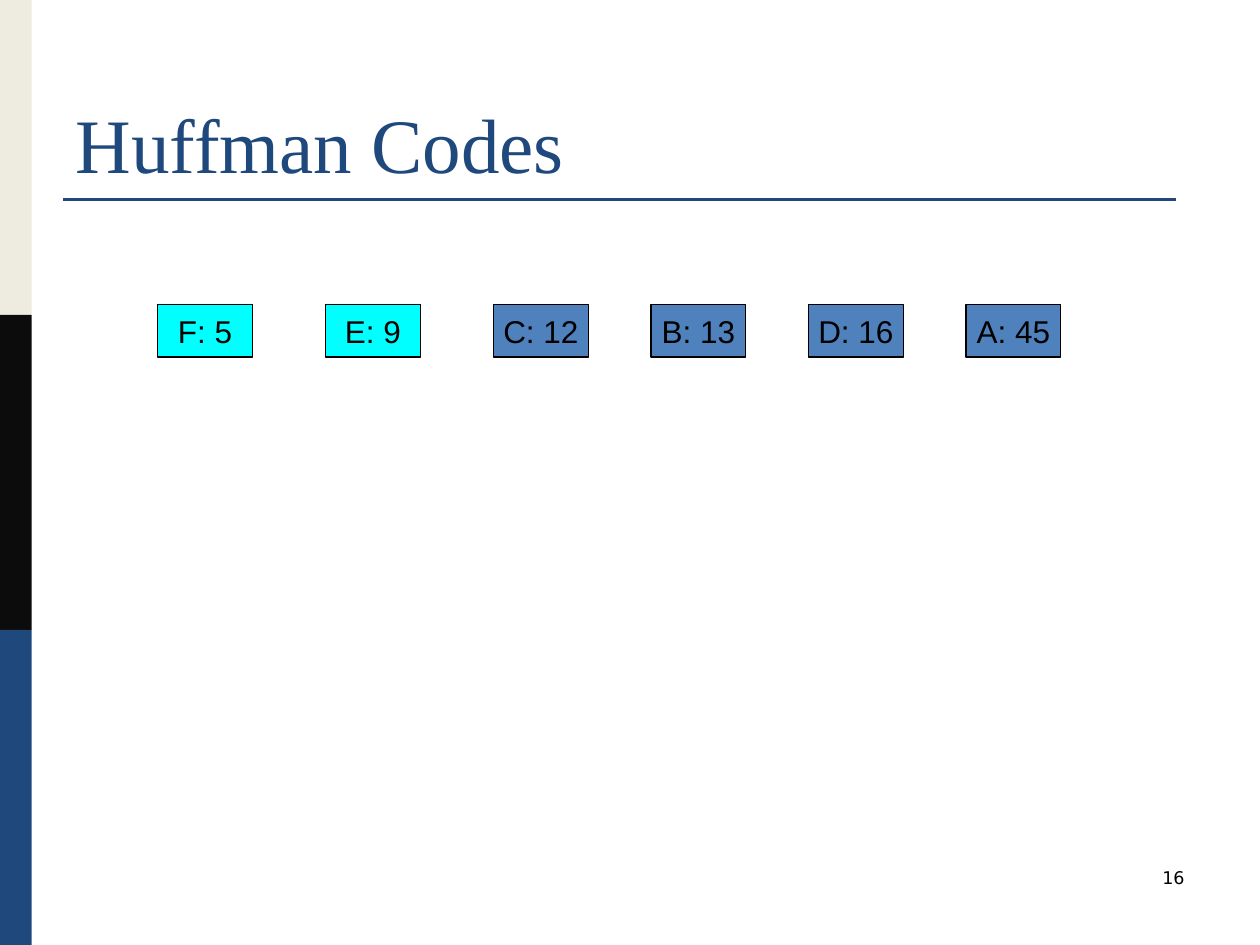
from pptx import Presentation
from pptx.dml.color import RGBColor
from pptx.enum import shapes, text
from pptx.oxml.ns import qn
from pptx.util import Cm, Pt
from lxml import etree

NAVY = RGBColor(0x1F, 0x49, 0x7D)
CREAM = RGBColor(0xEE, 0xEC, 0xE1)
COAL = RGBColor(0x0C, 0x0C, 0x0C)
CYAN = RGBColor(0x00, 0xFF, 0xFF)
BLUE = RGBColor(0x4F, 0x81, 0xBD)
BLACK = RGBColor(0x00, 0x00, 0x00)

WIDE, HIGH = 25.4, 19.05


def write(frame, words, size, font, color, align):
    para = frame.paragraphs[0]
    para.alignment = align
    run = para.add_run()
    run.text = words
    run.font.size = Pt(size)
    run.font.name = font
    run.font.color.rgb = color


def block(slide, left, top, width, height, fill):
    rect = slide.shapes.add_shape(
        shapes.MSO_SHAPE.RECTANGLE, Cm(left), Cm(top), Cm(width), Cm(height))
    rect.shadow.inherit = False
    rect.fill.solid()
    rect.fill.fore_color.rgb = fill
    rect.line.fill.background()
    return rect


def side_bar(slide, left, top, width, height):
    part = height / 3
    for i, color in enumerate((CREAM, COAL, NAVY)):
        block(slide, left, top + i * part, width, part, color)


def header(slide, left, top, width, height):
    title = slide.shapes.title
    title.left, title.top = Cm(left), Cm(top)
    title.width, title.height = Cm(width), Cm(height)
    frame = title.text_frame
    frame.auto_size = text.MSO_AUTO_SIZE.NONE
    frame.vertical_anchor = text.MSO_ANCHOR.BOTTOM
    write(frame, "Huffman Codes", 44, "Times New Roman", NAVY, text.PP_ALIGN.LEFT)
    base = Cm(top + height + 0.08)
    rule = slide.shapes.add_connector(
        shapes.MSO_CONNECTOR.STRAIGHT, Cm(left), base, Cm(left + width - 0.42), base)
    rule.line.color.rgb = NAVY
    rule.line.width = Pt(1.5)
    etree.SubElement(rule._element.spPr, qn("a:effectLst"))


def leaf(slide, left, top, width, height, label, fill):
    node = block(slide, left, top, width, height, fill)
    node.line.color.rgb = BLACK
    node.line.width = Pt(0.75)
    frame = node.text_frame
    frame.word_wrap = False
    frame.vertical_anchor = text.MSO_ANCHOR.MIDDLE
    write(frame, label, 18, "Arial", BLACK, text.PP_ALIGN.CENTER)


def leaf_row(slide, left, top, width, height):
    step = 3.175
    for i, (key, count) in enumerate(
            (("F", 5), ("E", 9), ("C", 12), ("B", 13), ("D", 16), ("A", 45))):
        low = i < 2
        shift = 0.21 * min(i, 2)
        leaf(slide, left + i * step + shift, top, width, height,
             f"{key}: {count}", CYAN if low else BLUE)


def page_mark(slide, left, top, width, height):
    box = slide.shapes.add_textbox(Cm(left), Cm(top), Cm(width), Cm(height))
    box.text_frame.word_wrap = True
    write(box.text_frame, "16", 10, "DejaVu Sans", BLACK, text.PP_ALIGN.RIGHT)


def main():
    deck = Presentation()
    deck.slide_width, deck.slide_height = Cm(WIDE), Cm(HIGH)
    slide = deck.slides.add_slide(deck.slide_layouts[5])
    side_bar(slide, 0, 0, 0.64, HIGH)
    header(slide, 1.27, 0.76, 22.86, 3.18)
    leaf_row(slide, 3.18, 6.14, 1.91, 1.06)
    page_mark(slide, 18.2, 17.36, 5.93, 1.27)
    deck.save("out.pptx")


if __name__ == "__main__":
    main()
